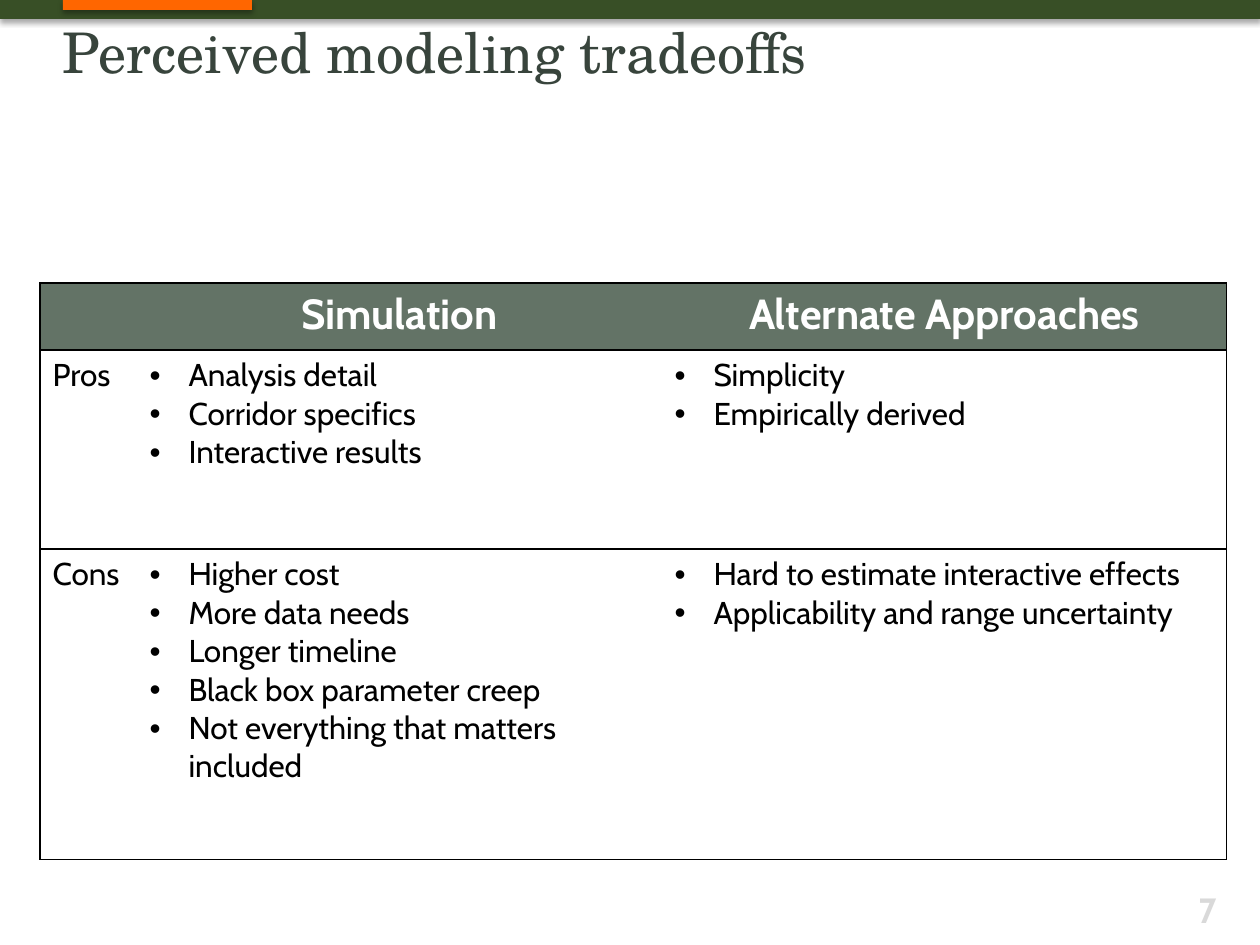
from dataclasses import dataclass

import pptx
import pptx.dml.color
import pptx.enum.shapes
import pptx.enum.text
import pptx.oxml
import pptx.oxml.ns
import pptx.util

SCALE = 914400 / 126  # EMU in one px
NS = pptx.oxml.ns.nsdecls("a")
ALIGN = pptx.enum.text.PP_ALIGN
SANS, SERIF = "Cabin", "TeX Gyre Schola"
BLACK, WHITE, SAGE = "000000", "FFFFFF", "637366"


@dataclass
class Box:
    x: int
    y: int
    w: int
    h: int

    def emu(self) -> list[int]:
        return [px(n) for n in (self.x, self.y, self.w, self.h)]


@dataclass
class Style:
    size: int
    color: str
    face: str = SANS
    bold: bool = False
    align: ALIGN = ALIGN.LEFT


@dataclass
class Row:
    height: int
    label: str
    items: list[list[str]]


HEAD = Style(24, WHITE, bold=True, align=ALIGN.CENTER)
BODY = Style(18, BLACK)
TITLE = Style(32, "38443C", SERIF)
PAGE = Style(20, "D9D9D9", bold=True, align=ALIGN.RIGHT)

COLS = [97, 525, 565]
NAMES = ["", "Simulation", "Alternate Approaches"]
HEAD_H = 67
ROWS = [
    Row(199, "Pros", [
        ["Analysis detail", "Corridor specifics", "Interactive results"],
        ["Simplicity", "Empirically derived"],
    ]),
    Row(311, "Cons", [
        ["Higher cost", "More data needs", "Longer timeline",
         "Black box parameter creep", "Not everything that matters included"],
        ["Hard to estimate interactive effects",
         "Applicability and range uncertainty"],
    ]),
]


def px(n: int) -> int:
    return round(n * SCALE)


def rgb(code: str) -> pptx.dml.color.RGBColor:
    return pptx.dml.color.RGBColor.from_string(code)


def write(frame, lines: list[str], style: Style, bullet: bool = False) -> None:
    for i, line in enumerate(lines):
        para = frame.add_paragraph() if i else frame.paragraphs[0]
        para.text = line
        para.alignment = style.align
        if bullet:
            props = para._p.get_or_add_pPr()
            props.set("marL", str(px(39)))
            props.set("indent", str(-px(39)))
            props.append(pptx.oxml.parse_xml(f'<a:buFont {NS} typeface="Arial"/>'))
            props.append(pptx.oxml.parse_xml(f'<a:buChar {NS} char="•"/>'))
        font = para.font
        font.name, font.bold = style.face, style.bold
        font.size = pptx.util.Pt(style.size)
        font.color.rgb = rgb(style.color)


def add_bar(slide, box: Box, color: str) -> None:
    bar = slide.shapes.add_shape(
        pptx.enum.shapes.MSO_SHAPE.RECTANGLE, *box.emu())
    bar.fill.solid()
    bar.fill.fore_color.rgb = rgb(color)
    bar.line.fill.background()
    bar.shadow.inherit = False
    bar._element.spPr.find(pptx.oxml.ns.qn("a:effectLst")).append(
        pptx.oxml.parse_xml(
            f'<a:outerShdw {NS} blurRad="39370" dist="22860" dir="5400000" '
            'rotWithShape="0"><a:srgbClr val="000000"><a:alpha val="35000"/>'
            '</a:srgbClr></a:outerShdw>'))


def add_text(slide, box: Box, text: str, style: Style):
    frame = slide.shapes.add_textbox(*box.emu()).text_frame
    frame.word_wrap = True
    write(frame, [text], style)
    return frame


def add_edges(cell, sides: str) -> None:
    props = cell._tc.get_or_add_tcPr()
    for i, side in enumerate("LRTB"):
        if side in sides:
            ink = f'<a:solidFill><a:srgbClr val="{BLACK}"/></a:solidFill>'
        else:
            ink = "<a:noFill/>"
        props.insert(i, pptx.oxml.parse_xml(
            f'<a:ln{side} {NS} w="9525">{ink}</a:ln{side}>'))


def add_grid(slide, box: Box) -> None:
    table = slide.shapes.add_table(
        len(ROWS) + 1, len(COLS), *box.emu()).table
    for col, width in zip(table.columns, COLS):
        col.width = px(width)
    for row, height in zip(table.rows, [HEAD_H] + [r.height for r in ROWS]):
        row.height = px(height)

    # Fills, and lines round each row
    for r, row in enumerate(table.rows):
        for c, cell in enumerate(row.cells):
            cell.fill.solid()
            cell.fill.fore_color.rgb = rgb(WHITE if r else SAGE)
            add_edges(cell, ("LTB", "TB", "RTB")[c])

    # Wording
    for c, name in enumerate(NAMES):
        write(table.cell(0, c).text_frame, [name], HEAD)
    for r, row in enumerate(ROWS, 1):
        write(table.cell(r, 0).text_frame, [row.label], BODY)
        for c, items in enumerate(row.items, 1):
            write(table.cell(r, c).text_frame, items, BODY, bullet=True)


def main() -> None:
    deck = pptx.Presentation()
    deck.slide_width, deck.slide_height = px(1260), px(945)
    slide = deck.slides.add_slide(deck.slide_layouts[6])

    # Top band
    add_bar(slide, Box(0, 0, 1260, 19), "384F26")
    add_bar(slide, Box(63, 0, 189, 10), "FF6600")

    # Title and page number
    title = add_text(slide, Box(63, 25, 1018, 120),
                     "Perceived modeling tradeoffs", TITLE)
    title.margin_left = title.margin_right = 0
    title.margin_top = title.margin_bottom = 0
    title.paragraphs[0].line_spacing = pptx.util.Pt(34)
    add_text(slide, Box(1113, 882, 116, 44), "7", PAGE)

    # Pros and cons
    height = HEAD_H + sum(row.height for row in ROWS)
    add_grid(slide, Box(40, 283, sum(COLS), height))
    deck.save("out.pptx")


if __name__ == "__main__":
    main()
